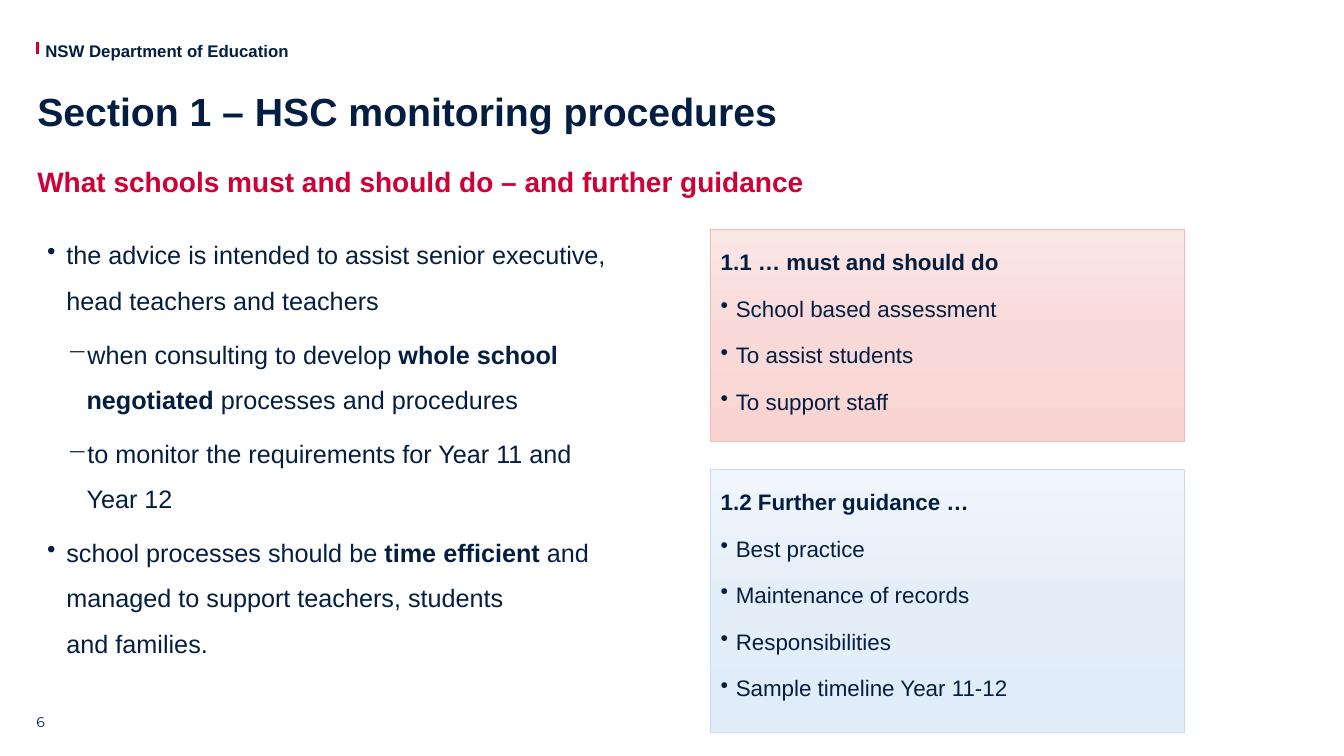
from copy import deepcopy

from lxml import etree
from pptx import Presentation
from pptx import util as u
from pptx.dml.color import RGBColor
from pptx.enum import shapes, text
from pptx.oxml import ns

COLOURS = {
    "navy": "041E42",
    "red": "CE0037",
    "must_line": "F3B8B5",
    "guide_line": "C8DCF0",
}
GRADIENTS = {
    "must": ("FBE7E6", "F9D9D8", "F9D4D2"),
    "guide": ("F1F6FC", "E4EEF8", "E0ECF8"),
}
EMU_PER_PX = 9144  # 100 px to the inch


def px(length):
    return u.Emu(length * EMU_PER_PX)


def rgb(name):
    return RGBColor.from_string(COLOURS[name])


class SlideBuilder:
    def __init__(self, prs):
        self.slide = prs.slides.add_slide(prs.slide_layouts[5])
        self.font = "Arial"

    def frame(self, shape, margins, anchor=text.MSO_ANCHOR.TOP, wrap=True):
        frame = shape.text_frame
        frame.auto_size = text.MSO_AUTO_SIZE.NONE
        frame.word_wrap = wrap
        frame.vertical_anchor = anchor
        (frame.margin_left, frame.margin_top,
         frame.margin_right, frame.margin_bottom) = map(px, margins)
        return frame

    def paragraph(self, frame, content, size, colour="navy", bold=False,
                  spacing=1.0, after=0, bullet=None, indent=0, hang=0, font=None):
        """Add a paragraph; asterisks toggle bold and a newline is a line break."""
        first = frame.paragraphs[0]
        para = frame.add_paragraph() if first.runs else first
        para.alignment = text.PP_ALIGN.LEFT
        para.line_spacing = spacing
        para.space_before, para.space_after = u.Pt(0), u.Pt(after)
        if bullet:
            props = para._p.get_or_add_pPr()
            props.set("marL", str(px(indent)))
            props.set("indent", str(-px(hang)))
            etree.SubElement(props, ns.qn("a:buChar")).set("char", bullet)
        for part, piece in enumerate(content.split("*")):
            for row, words in enumerate(piece.split("\n")):
                if row:
                    para.add_line_break()
                run = para.add_run()
                run.text = words
                run.font.name = font or self.font
                run.font.size = u.Pt(size)
                run.font.bold = bold or part % 2 == 1
                run.font.color.rgb = rgb(colour)

    def title(self, box, content):
        title = self.slide.shapes.title
        title.left, title.top, title.width, title.height = map(px, box)
        frame = self.frame(title, (0, 0, 0, 0), text.MSO_ANCHOR.MIDDLE)
        self.paragraph(frame, content, 28, bold=True, spacing=0.9)

    def textbox(self, box, margins=(0, 0, 0, 0), **options):
        return self.frame(self.slide.shapes.add_textbox(*map(px, box)), margins, **options)

    def line(self, start, end, colour, width):
        line = self.slide.shapes.add_connector(
            shapes.MSO_CONNECTOR.STRAIGHT, *map(px, start + end))
        line.line.color.rgb = rgb(colour)
        line.line.width = u.Pt(width)
        etree.SubElement(line._element.spPr, ns.qn("a:effectLst"))

    def panel(self, box, theme, heading, items):
        panel = self.slide.shapes.add_shape(shapes.MSO_SHAPE.RECTANGLE, *map(px, box))
        panel.shadow.inherit = False
        panel.line.color.rgb = rgb(theme + "_line")
        panel.line.width = u.Pt(0.5)
        panel.fill.gradient()
        panel.fill.gradient_angle = 270
        stop_list = panel._element.spPr.find(".//" + ns.qn("a:gsLst"))
        stop_list.append(deepcopy(stop_list[-1]))
        for i, (stop, tint) in enumerate(zip(panel.fill.gradient_stops, GRADIENTS[theme])):
            stop.position = i / 2
            stop.color.rgb = RGBColor.from_string(tint)
        frame = self.frame(panel, (10, 5, 10, 5))
        self.paragraph(frame, heading, 16, bold=True, spacing=1.5, after=4.5)
        for item in items:
            self.paragraph(frame, item, 16, spacing=1.5, after=4.5,
                           bullet="•", indent=15, hang=15)


def main():
    prs = Presentation()
    prs.slide_width, prs.slide_height = px(1333), px(750)
    page = SlideBuilder(prs)

    page.line((37, 42), (37, 54), "red", 2.5)
    department = page.textbox((45, 40, 244, 20), wrap=False)
    page.paragraph(department, "NSW Department of Education", 12, bold=True)

    page.title((37, 85, 1255, 55), "Section 1 – HSC monitoring procedures")
    subtitle = page.textbox((37, 142, 1256, 59), (0, 5, 10, 5))
    page.paragraph(subtitle, "What schools must and should do – and further guidance",
                   20, "red", bold=True, spacing=1.5, after=6)

    advice = page.textbox((37, 218, 592, 450), (10, 5, 10, 5))
    for level, point in (
        (0, "the advice is intended to assist senior executive, head teachers and teachers"),
        (1, "when consulting to develop *whole school negotiated* processes and procedures"),
        (1, "to monitor the requirements for Year 11 and Year 12"),
        (0, "school processes should be *time efficient* and managed to support teachers, "
            "students \nand families."),
    ):
        page.paragraph(advice, point, 18, spacing=1.5, after=6,
                       bullet="•−"[level], indent=(19, 39)[level], hang=19)

    page.panel((705, 228, 470, 210), "must", "1.1 … must and should do",
               ("School based assessment", "To assist students", "To support staff"))
    page.panel((705, 466, 470, 261), "guide", "1.2 Further guidance …",
               ("Best practice", "Maintenance of records", "Responsibilities",
                "Sample timeline Year 11-12"))

    page_number = page.textbox((36, 685, 45, 40), anchor=text.MSO_ANCHOR.BOTTOM)
    page.paragraph(page_number, "6", 10, font="Montserrat")

    prs.save("out.pptx")


if __name__ == "__main__":
    main()
